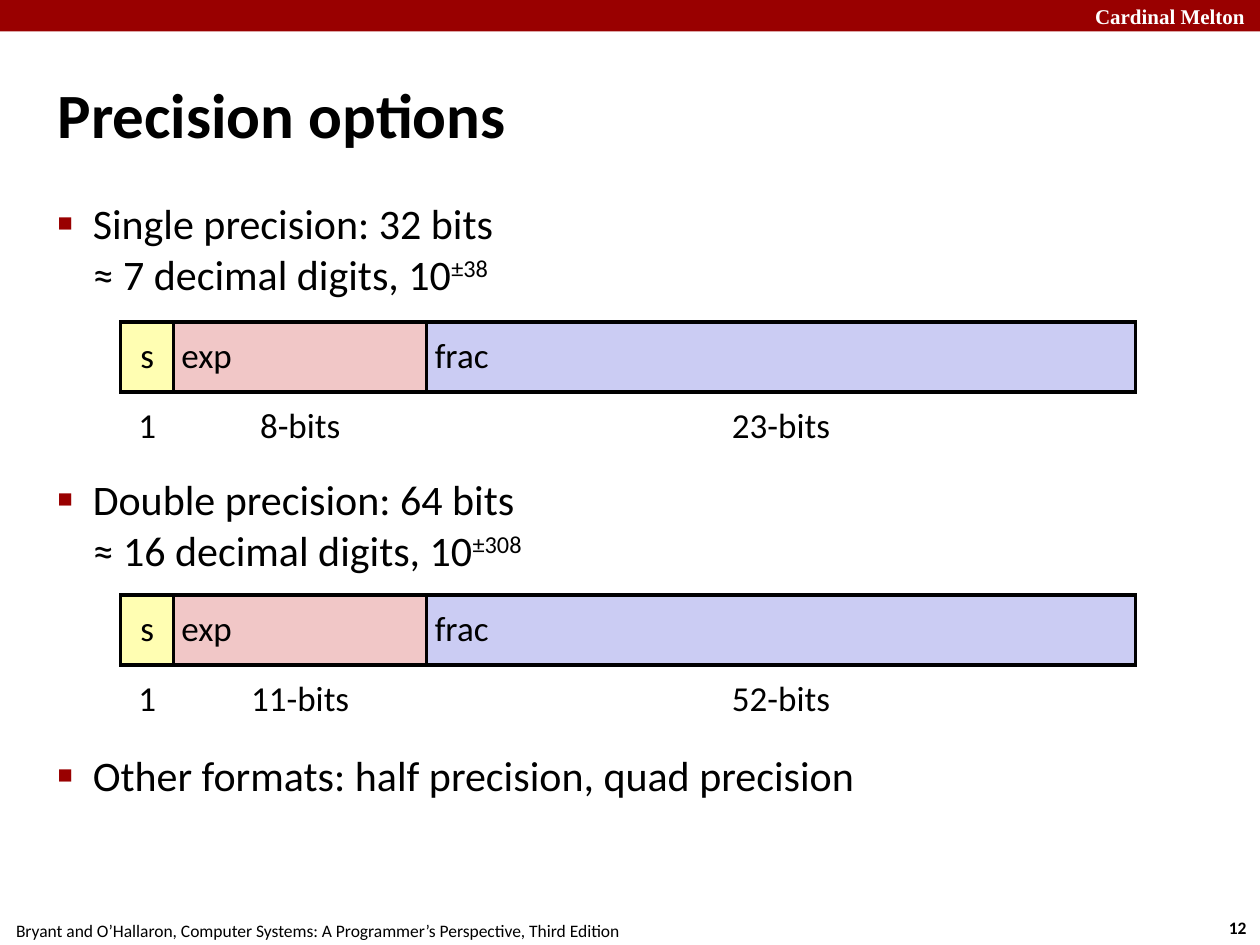
from pptx import Presentation
from pptx.dml.color import RGBColor
from pptx.enum.shapes import MSO_SHAPE
from pptx.enum.text import MSO_ANCHOR, MSO_AUTO_SIZE, PP_ALIGN
from pptx.oxml.ns import qn
from pptx.util import Pt
from lxml.etree import SubElement

COLORS = {
    "black": "000000",
    "white": "FFFFFF",
    "red": "990000",
    "sign": "FFFEB2",
    "exp": "F1C7C7",
    "frac": "CBCCF3",
}
FIELDS = [("s", "sign", 30.2), ("exp", "exp", 144.8), ("frac", "frac", 404.7)]
ROW_HEIGHT = 40
BULLETS = [
    (["Single precision: 32 bits", "≈ 7 decimal digits, 10"], "±38", 6),
    (["Double precision: 64 bits", "≈ 16 decimal digits, 10"], "±308", 100),
    (["Other formats: half precision, quad precision"], None, 100),
]


def rgb(name):
    return RGBColor.from_string(COLORS[name])


def place(sp, left, top, width, height):
    sp.left, sp.top, sp.width, sp.height = Pt(left), Pt(top), Pt(width), Pt(height)


def set_insets(tf, inset):
    tf.margin_left = tf.margin_right = tf.margin_top = tf.margin_bottom = Pt(inset)


def add_run(p, text, size, color="black", bold=False, font="Calibri"):
    r = p.add_run()
    r.text = text
    r.font.size = Pt(size)
    r.font.name = font
    r.font.bold = bold
    r.font.color.rgb = rgb(color)
    return r


def add_label(s, box, text, size, align, **style):
    tf = s.shapes.add_textbox(*map(Pt, box)).text_frame
    tf.word_wrap = False
    p = tf.paragraphs[0]
    p.alignment = align
    add_run(p, text, size, **style)


def add_band(s):
    sp = s.shapes.add_shape(MSO_SHAPE.RECTANGLE, 0, 0, Pt(720), Pt(18))
    sp.shadow.inherit = False
    sp.fill.solid()
    sp.fill.fore_color.rgb = rgb("red")
    sp.line.fill.background()


def fill_title(sp, text):
    place(sp, 30, 20, 660, 90)
    tf = sp.text_frame
    set_insets(tf, 3)
    tf.auto_size = MSO_AUTO_SIZE.NONE
    tf.vertical_anchor = MSO_ANCHOR.MIDDLE
    p = tf.paragraphs[0]
    p.alignment = PP_ALIGN.LEFT
    add_run(p, text, 36, bold=True)


def set_bullet(p):
    pPr = p._p.get_or_add_pPr()
    pPr.set("marL", str(Pt(20)))
    pPr.set("indent", str(-Pt(20)))
    color = SubElement(pPr, qn("a:buClr"))
    SubElement(color, qn("a:srgbClr"), val=COLORS["red"])
    SubElement(pPr, qn("a:buSzPct"), val="60000")
    SubElement(pPr, qn("a:buChar"), char="■")


def fill_body(sp, bullets):
    place(sp, 30, 110, 660, 428)
    tf = sp.text_frame
    set_insets(tf, 3)
    tf.auto_size = MSO_AUTO_SIZE.NONE
    for i, (lines, exponent, space) in enumerate(bullets):
        p = tf.add_paragraph() if i else tf.paragraphs[0]
        p.space_before = Pt(space)
        set_bullet(p)
        for j, line in enumerate(lines):
            if j:
                p.add_line_break()
            add_run(p, line, 24)
        if exponent:
            r = add_run(p, exponent, 24)
            r.font._element.set("baseline", "30000")


def set_borders(cell, sides):
    tcPr = cell._tc.get_or_add_tcPr()
    for side in "LRTB":
        ln = SubElement(tcPr, qn(f"a:ln{side}"), w=str(Pt(2)))
        if side in sides:
            fill = SubElement(ln, qn("a:solidFill"))
            SubElement(fill, qn("a:srgbClr"), val=COLORS["black"])
        else:
            SubElement(ln, qn("a:noFill"))


def fill_cell(cell, text, align, sides, color=None):
    set_insets(cell, 4.5)
    cell.vertical_anchor = MSO_ANCHOR.MIDDLE
    set_borders(cell, sides)
    if color:
        cell.fill.solid()
        cell.fill.fore_color.rgb = rgb(color)
    else:
        cell.fill.background()
    p = cell.text_frame.paragraphs[0]
    p.alignment = align
    add_run(p, text, 20)


def add_format_table(s, top, widths):
    total = sum(width for _, _, width in FIELDS)
    frame = s.shapes.add_table(2, len(FIELDS), Pt(69), Pt(top), Pt(total), Pt(2 * ROW_HEIGHT))
    table = frame.table
    table.first_row = table.horz_banding = False
    for row in table.rows:
        row.height = Pt(ROW_HEIGHT)
    for i, ((name, color, width), bits) in enumerate(zip(FIELDS, widths)):
        table.columns[i].width = Pt(width)
        align = PP_ALIGN.LEFT if i else PP_ALIGN.CENTER
        fill_cell(table.cell(0, i), name, align, "LRTB", color)
        fill_cell(table.cell(1, i), bits, PP_ALIGN.CENTER, "T")


def main():
    prs = Presentation()
    prs.slide_width, prs.slide_height = Pt(720), Pt(540)
    s = prs.slides.add_slide(prs.slide_layouts[1])
    fill_title(s.shapes.title, "Precision options")
    fill_body(s.placeholders[1], BULLETS)
    add_band(s)
    add_label(s, (618.5, -1.5, 100, 21.6), "Cardinal Melton", 12, PP_ALIGN.RIGHT,
              color="white", bold=True, font="Times New Roman")
    add_label(s, (694, 520.5, 26.6, 19.4), "12", 10, PP_ALIGN.CENTER, bold=True)
    add_label(s, (-1.5, 522, 366, 19.4),
              "Bryant and O’Hallaron, Computer Systems: A Programmer’s Perspective, Third Edition",
              10, PP_ALIGN.CENTER)
    add_format_table(s, 184, ["1", "8-bits", "23-bits"])
    add_format_table(s, 340, ["1", "11-bits", "52-bits"])
    prs.save("out.pptx")


if __name__ == "__main__":
    main()
